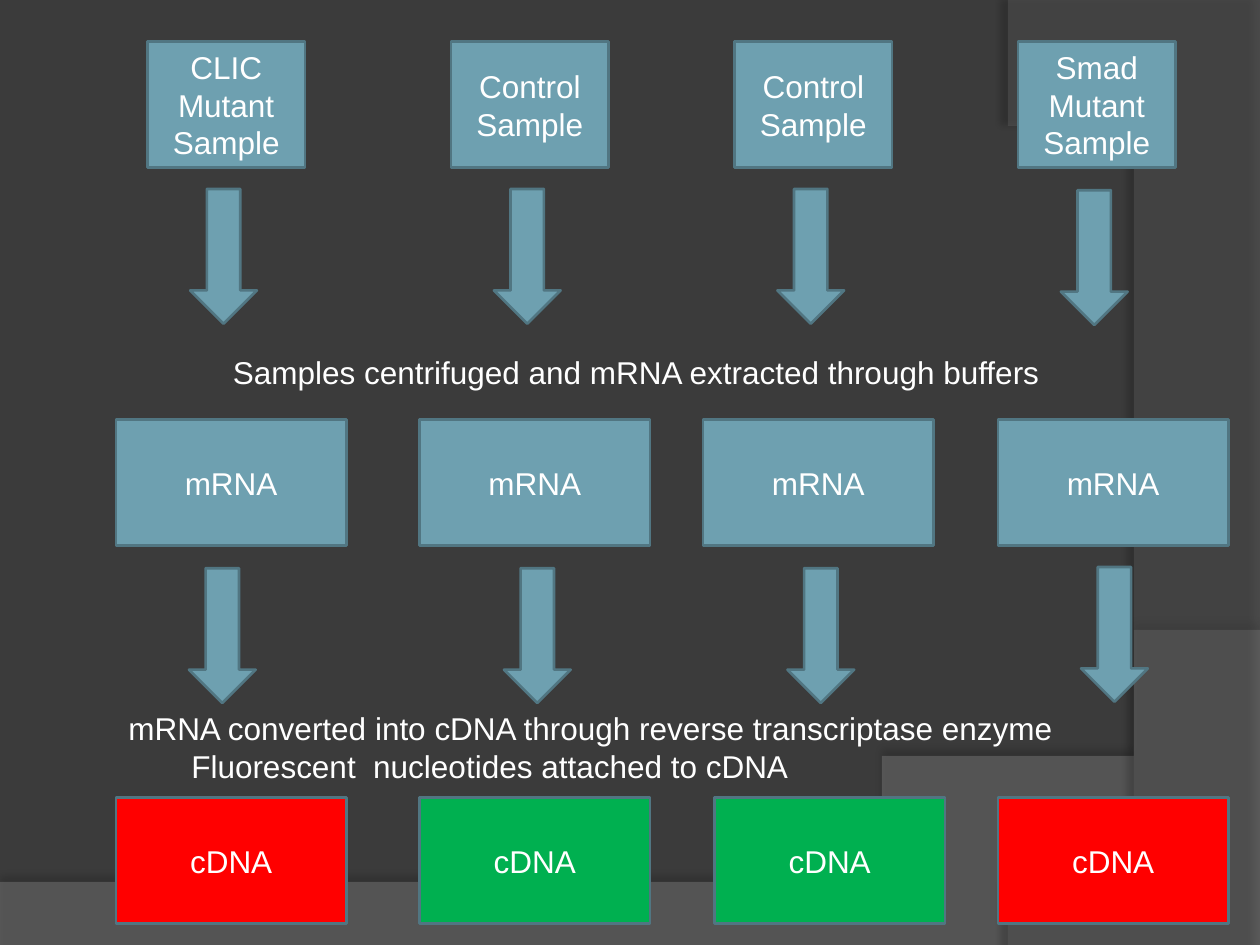
from lxml import etree
from pptx import Presentation
from pptx import util as u
from pptx.dml.color import RGBColor
from pptx.enum import shapes, text
from pptx.oxml.ns import qn

DARK, BLUE, EDGE, WHITE = "3B3B3B", "6EA0B0", "517682", "FFFFFF"
RED, GREEN = "FF0000", "00B050"


def paint(fill, color):
    fill.solid()
    fill.fore_color.rgb = RGBColor.from_string(color)


def bezier(start, one, two, end, steps=40):
    """Points along a cubic curve, after its start."""
    points = []
    for i in range(1, steps + 1):
        t = i / steps
        s = 1 - t
        points.append(tuple(
            s**3 * a + 3 * s * s * t * b + 3 * s * t * t * c + t**3 * d
            for a, b, c, d in zip(start, one, two, end)))
    return points


class Deck:
    font, size, line = "Arial", u.Pt(18), u.Pt(1.5)

    def __init__(self, slide):
        self.slide = slide
        self.items = slide.shapes

    def label(self, frame, words, align):
        frame.text = words
        for para in frame.paragraphs:
            para.alignment = align
            for run in para.runs:
                run.font.name, run.font.size = self.font, self.size
                paint(run.font.fill, WHITE)

    def shape(self, kind, left, top, width, height, color):
        item = self.items.add_shape(kind, *map(u.Inches, (left, top, width, height)))
        item.shadow.inherit = False
        paint(item.fill, color)
        paint(item.line.fill, EDGE)
        item.line.width = self.line
        return item

    def box(self, words, left, top, width, color=BLUE):
        item = self.shape(shapes.MSO_SHAPE.RECTANGLE, left, top, width, 1, color)
        item.text_frame.vertical_anchor = text.MSO_ANCHOR.MIDDLE
        self.label(item.text_frame, words, text.PP_ALIGN.CENTER)

    def arrow(self, left, top):
        self.shape(shapes.MSO_SHAPE.DOWN_ARROW, left, top, 0.53, 1.07, BLUE)

    def note(self, words, left, top, width, height):
        item = self.items.add_textbox(*map(u.Inches, (left, top, width, height)))
        item.text_frame.word_wrap = False
        item.text_frame.auto_size = text.MSO_AUTO_SIZE.SHAPE_TO_FIT_TEXT
        self.label(item.text_frame, words, text.PP_ALIGN.LEFT)

    def sweep(self, points, color, alpha, shade, dist, angle):
        """A see-through backdrop area with a soft shadow."""
        outline = self.items.build_freeform(*points[0], scale=u.Inches(1))
        outline.add_line_segments(points[1:], close=True)
        item = outline.convert_to_shape()
        paint(item.fill, color)
        item.line.fill.background()
        item.shadow.inherit = False
        props = item.element.spPr
        tint = props.find(qn("a:solidFill")).find(qn("a:srgbClr"))
        self.fade(tint, alpha)
        cast = etree.SubElement(
            props.find(qn("a:effectLst")), qn("a:outerShdw"),
            blurRad=str(u.Pt(4)), dist=str(u.Pt(dist)), dir=str(angle * 60000),
            algn="ctr", rotWithShape="0")
        self.fade(etree.SubElement(cast, qn("a:srgbClr"), val="000000"), shade)

    def fade(self, tint, alpha):
        etree.SubElement(tint, qn("a:alpha"), val=str(alpha * 1000))


def main():
    show = Presentation()
    show.slide_width, show.slide_height = u.Inches(10), u.Inches(7.5)
    slide = show.slides.add_slide(show.slide_layouts[6])
    paint(slide.background.fill, DARK)
    deck = Deck(slide)

    # Backdrop sweeps
    low = bezier((10, 5.2), (5.59, 7.29), (3.91, 7.19), (0, 7.05))
    deck.sweep([(0, 7.5), (10, 7.5), (10, 5.2)] + low, "7F7F7F", 45, 35, 3.5, 270)
    side = bezier((8.21, 7.5), (9.35, 6.19), (10.18, 3), (8, 0))
    deck.sweep([(10, 0.02), (10, 7.5), (8.21, 7.5)] + side, "5E5E5E", 40, 45, 4, 180)

    # Columns: sample, its left, arrow top; mRNA left, arrow left and top; cDNA left, colour
    columns = [
        ("CLIC Mutant\nSample", 1.17, 1.5, 0.92, 1.5, 4.51, 0.92, RED),
        ("Control Sample", 3.58, 1.5, 3.33, 4, 4.51, 3.33, GREEN),
        ("Control Sample", 5.83, 1.5, 5.58, 6.25, 4.51, 5.67, GREEN),
        ("Smad Mutant Sample", 8.08, 1.51, 7.92, 8.58, 4.5, 7.92, RED),
    ]
    for name, left, top, mid, next_left, next_top, last, color in columns:
        deck.box(name, left, 0.33, 1.25)
        deck.arrow(left + 0.34, top)
        deck.box("mRNA", mid, 3.33, 1.83)
        deck.arrow(next_left, next_top)
        deck.box("cDNA", last, 6.33, 1.83, color)

    # Step notes
    deck.note("Samples centrifuged and mRNA extracted through buffers",
              1.75, 2.75, 6.66, 0.4)
    deck.note("mRNA converted into cDNA through reverse transcriptase enzyme\n"
              "\tFluorescent  nucleotides attached to cDNA", 0.92, 5.58, 7.61, 1.01)

    show.save("out.pptx")


if __name__ == "__main__":
    main()
